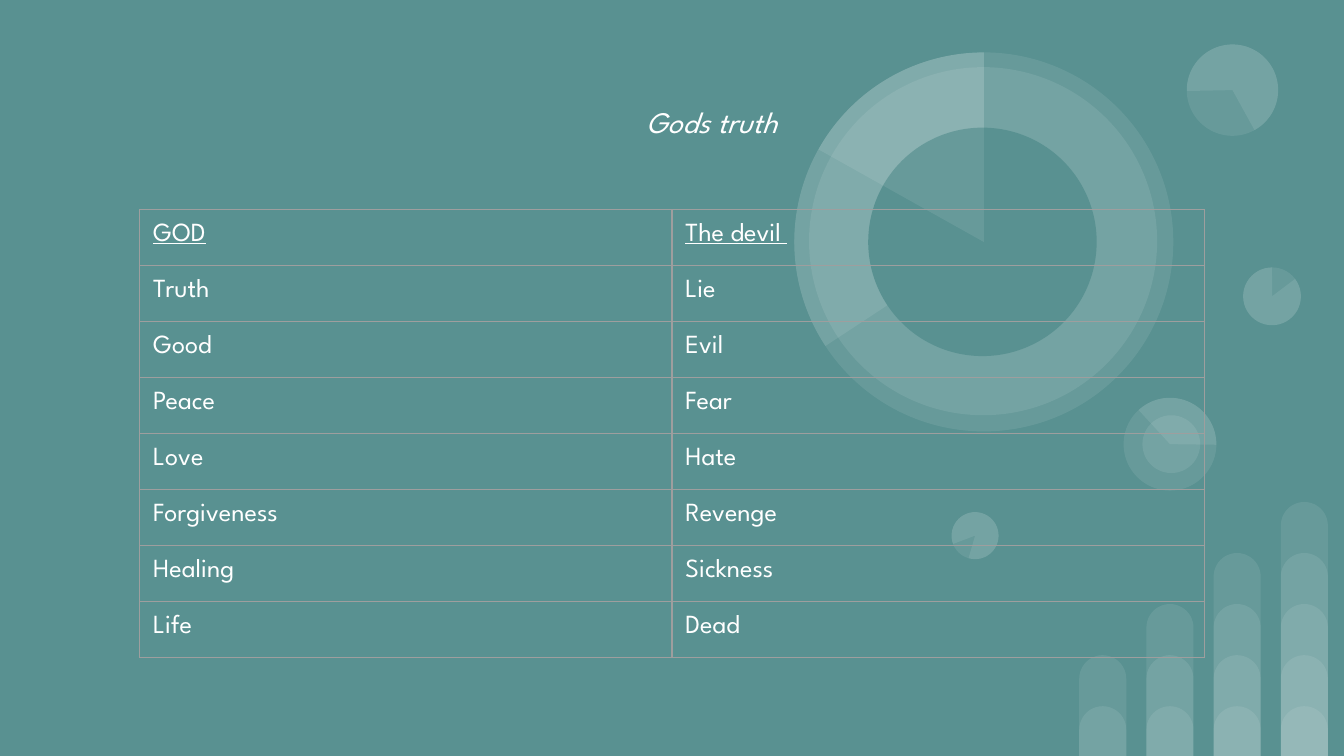
from typing import NamedTuple

from lxml.etree import SubElement
from pptx import Presentation
from pptx.dml.color import RGBColor as RGB
from pptx.enum.shapes import MSO_SHAPE as SHAPE
from pptx.enum.text import MSO_ANCHOR as ANCHOR, PP_ALIGN as ALIGN
from pptx.oxml.ns import qn
from pptx.util import Inches, Pt

COLORS = {"bg": "599191", "white": "FFFFFF", "border": "9E9E9E"}
FONT = "League Spartan"
VEIL = 9  # opacity of the decorations, percent
WIDTH, HEIGHT = 10, 10 * 9 / 16


class Disc(NamedTuple):
    """A circle, or a pie when its start and end angles are given."""
    left: float
    top: float
    size: float
    rotation: float = 0
    angles: tuple = ()
    opaque: bool = False


DISCS = [
    Disc(9.25, 1.99, 0.43),
    Disc(7.08, 3.81, 0.35, 196.2),
    Disc(8.36, 2.96, 0.69, 90),
    Disc(8.36, 2.96, 0.69, 90, (82.45, 162.46)),
    Disc(8.5, 3.09, 0.43, 90),
    Disc(9.25, 1.99, 0.43, 0, (193.77, 162)),
    Disc(8.83, 0.33, 0.68, 215.9),
    Disc(8.83, 0.33, 0.68, 215.9, (193.77, 123.14)),
    Disc(5.91, 0.39, 2.82),
    Disc(6.02, 0.5, 2.59, 34.1),
    Disc(5.91, 0.39, 2.82, 0, (88.01, 162)),
    Disc(6.46, 0.95, 1.7, 34.1, opaque=True),
    Disc(5.91, 0.39, 2.82, 0, (125.54, 162)),
    Disc(7.08, 3.81, 0.35, 196.2, (193.77, 162)),
]

ROWS = [
    ("GOD", "The devil "),
    ("Truth", "Lie"),
    ("Good", "Evil"),
    ("Peace", "Fear"),
    ("Love", "Hate"),
    ("Forgiveness", "Revenge"),
    ("Healing", "Sickness"),
    ("Life", "Dead"),
]


def add_decor(s, kind, left: float, top: float, width: float, height: float,
              adjustments: tuple = (), opaque: bool = False):
    """Add a borderless shape, translucent white unless opaque."""
    sp = s.shapes.add_shape(kind, *map(Inches, (left, top, width, height)))
    for i, value in enumerate(adjustments):
        sp.adjustments[i] = value
    sp.shadow.inherit = False
    sp.line.fill.background()
    sp.fill.solid()
    sp.fill.fore_color.rgb = RGB.from_string(COLORS["bg" if opaque else "white"])
    if not opaque:
        color = sp.fill._xPr.find(f".//{qn('a:srgbClr')}")
        SubElement(color, qn("a:alpha"), val=str(VEIL * 1000))
    return sp


def add_disc(s, disc: Disc) -> None:
    kind = SHAPE.PIE if disc.angles else SHAPE.OVAL
    sp = add_decor(s, kind, disc.left, disc.top, disc.size, disc.size,
                   disc.angles, disc.opaque)
    sp.rotation = disc.rotation


def write(tf, text: str, **formats) -> None:
    """Put one formatted run in a text frame."""
    r = tf.paragraphs[0].add_run()
    r.text = text
    for name, value in {"name": FONT, **formats}.items():
        setattr(r.font, name, value)
    r.font.color.rgb = RGB.from_string(COLORS["white"])


def set_margins(target) -> None:
    for side in ("left", "right", "top", "bottom"):
        setattr(target, f"margin_{side}", Inches(0.1))


def add_borders(cell) -> None:
    tc_pr = cell._tc.get_or_add_tcPr()
    for side in "LRTB":
        ln = SubElement(tc_pr, qn(f"a:ln{side}"), w=str(Pt(0.75)))
        fill = SubElement(ln, qn("a:solidFill"))
        SubElement(fill, qn("a:srgbClr"), val=COLORS["border"])


def add_comparison(s) -> None:
    col_width, row_height = Inches(3.96), Inches(0.4167)
    table = s.shapes.add_table(len(ROWS), 2, Inches(1.04), Inches(1.56),
                               2 * col_width, len(ROWS) * row_height).table
    table.first_row = table.horz_banding = False
    for i, row in enumerate(ROWS):
        for j, text in enumerate(row):
            cell = table.cell(i, j)
            add_borders(cell)
            cell.fill.background()
            set_margins(cell)
            cell.vertical_anchor = ANCHOR.TOP
            write(cell.text_frame, text, size=Pt(14), underline=i == 0)


def main() -> None:
    prs = Presentation()
    prs.slide_width, prs.slide_height = Inches(WIDTH), Inches(HEIGHT)
    s = prs.slides.add_slide(prs.slide_layouts[0])
    s.background.fill.solid()
    s.background.fill.fore_color.rgb = RGB.from_string(COLORS["bg"])

    # Stacked bars, one level taller per column
    for col in range(4):
        for level in range(col + 2):
            height = 0.37 + 0.38 * level
            add_decor(s, SHAPE.ROUND_2_SAME_RECTANGLE, 8.03 + 0.5 * col,
                      HEIGHT - height, 0.35, height, (0.5, 0))

    # Circles and pies
    for disc in DISCS:
        add_disc(s, disc)

    # Subtitle, in front of the decorations
    title, subtitle = s.placeholders
    title._element.getparent().remove(title._element)
    s.shapes._spTree.append(subtitle._element)
    subtitle.left, subtitle.top = Inches(0.89), Inches(0.67)
    subtitle.width, subtitle.height = Inches(8.81), Inches(4.6)
    tf = subtitle.text_frame
    set_margins(tf)
    tf.vertical_anchor = ANCHOR.TOP
    p = tf.paragraphs[0]
    p.alignment, p.space_before = ALIGN.CENTER, Pt(0)
    write(tf, "Gods truth", size=Pt(16), italic=True)

    # Comparison table
    add_comparison(s)
    prs.save("out.pptx")


if __name__ == "__main__":
    main()
